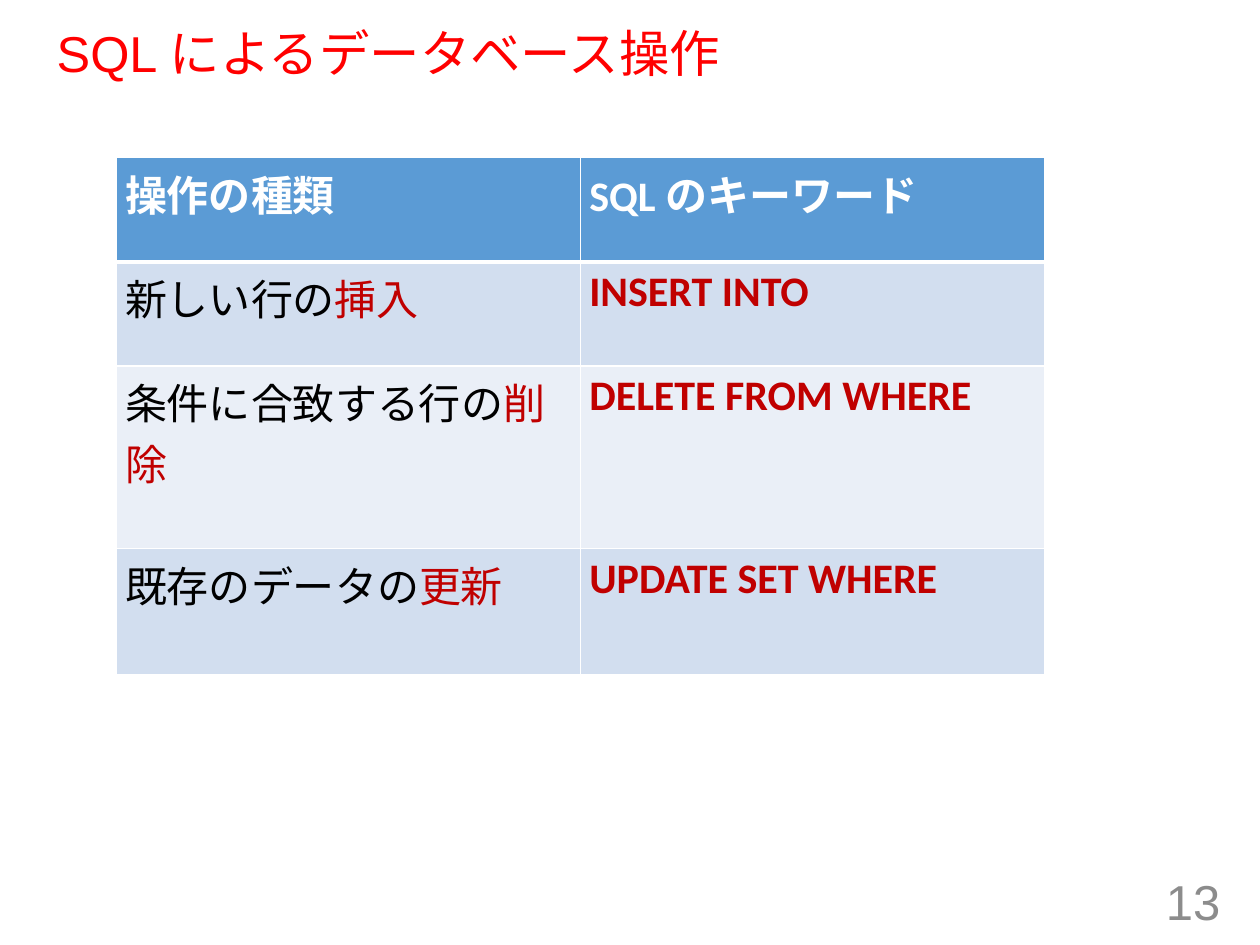
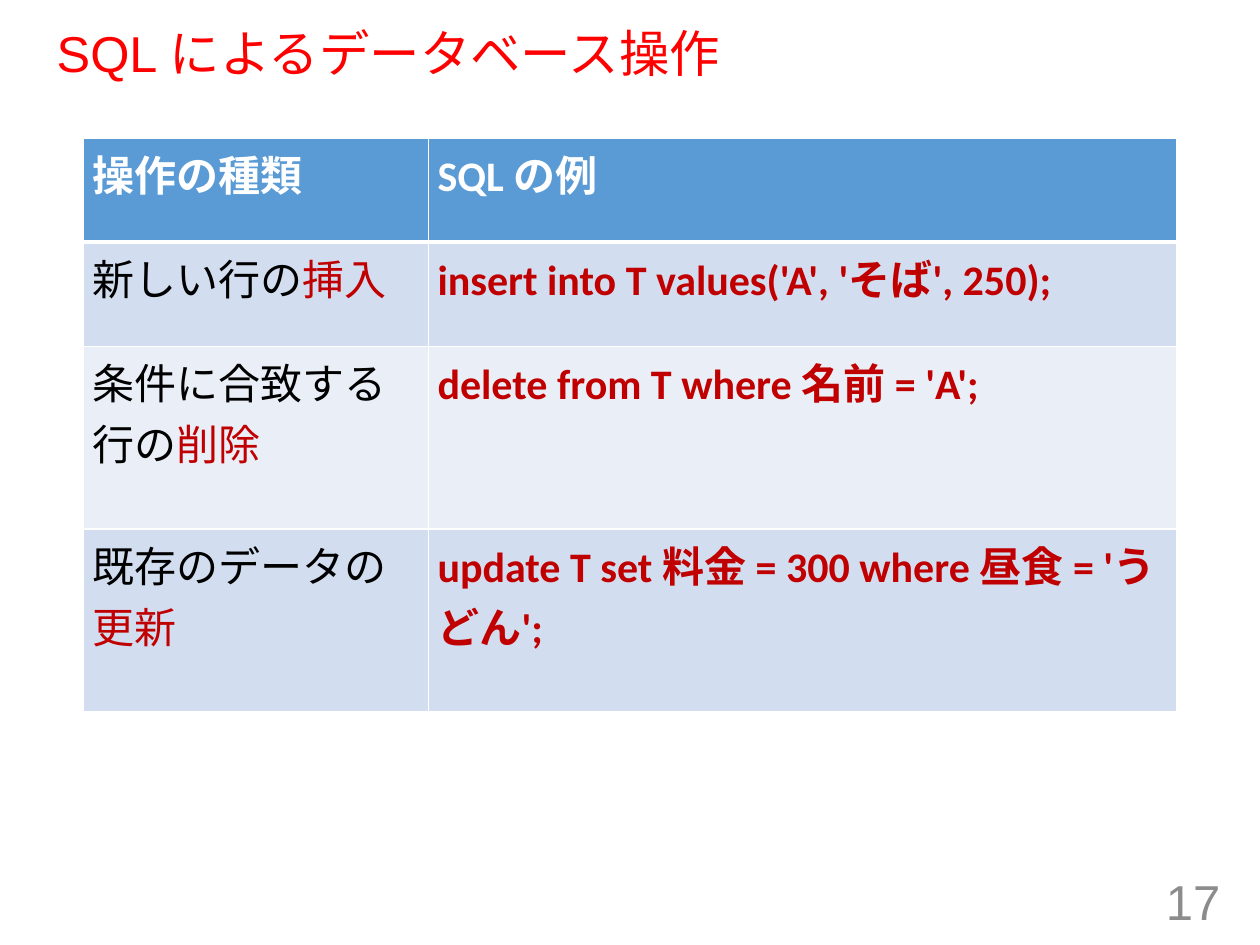
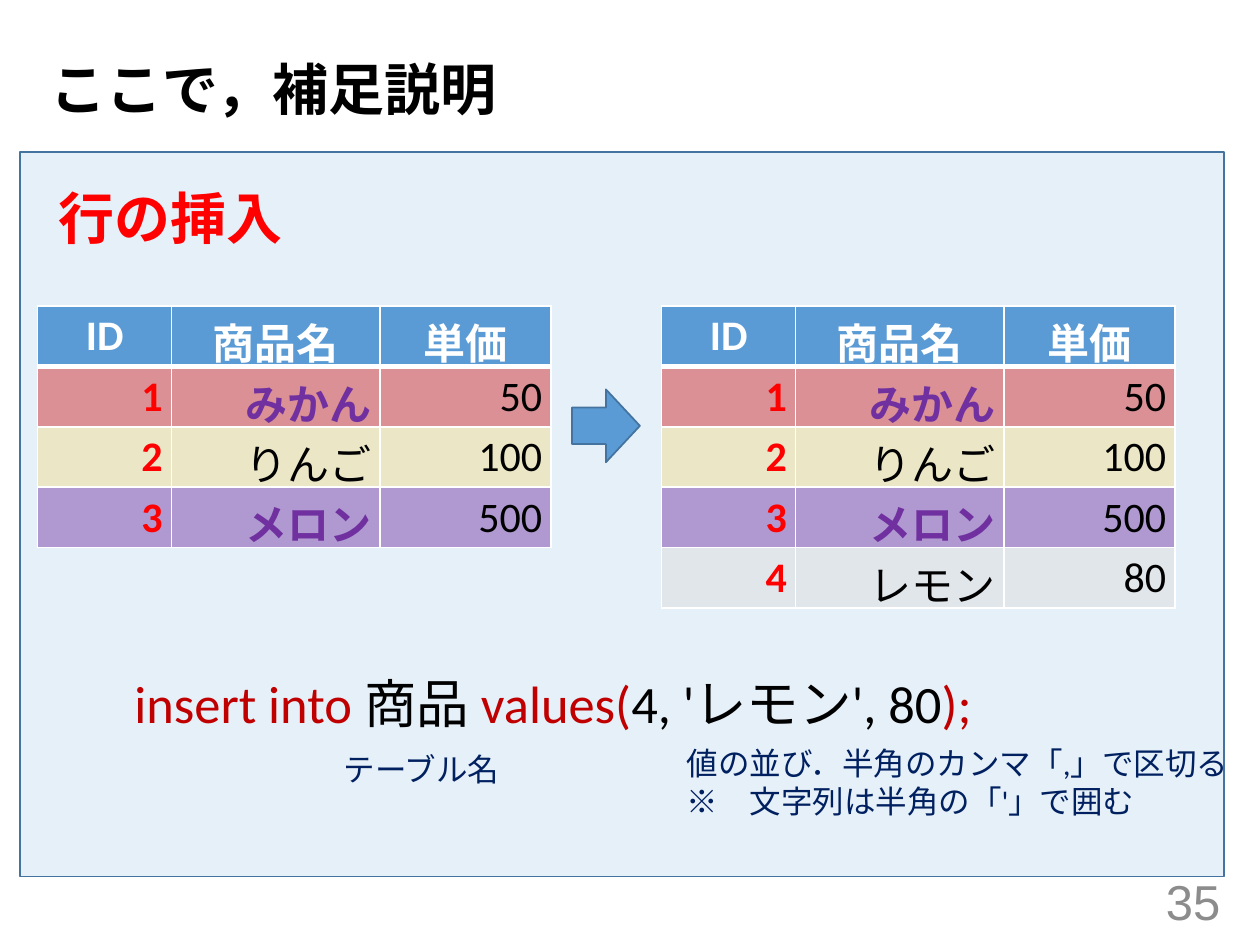
"""Build three slides on SQL row operations."""
from dataclasses import dataclass

from pptx import Presentation
from pptx import util as u
from pptx.dml.color import RGBColor
from pptx.enum import lang, shapes, text
from pptx.oxml import parse_xml
from pptx.oxml.ns import nsdecls, qn


@dataclass(frozen=True)
class Theme:
    """Colours, fonts and type sizes of the deck."""
    blue: str = "5B9BD5"
    edge: str = "43739E"
    bands: tuple = ("D2DEEF", "EAEFF7")
    white: str = "FFFFFF"
    black: str = "000000"
    red: str = "FF0000"
    dark: str = "C00000"
    navy: str = "002060"
    plum: str = "7030A0"
    gray: str = "8C8C8C"
    head: str = "Arial"
    body: str = "Calibri"
    alt: str = "Cabin"
    small: float = 18
    cell: float = 24
    page: float = 28
    title: float = 28.8
    code: float = 30
    big: float = 32


T = Theme()
LEFT, MID, RIGHT = text.PP_ALIGN.LEFT, text.PP_ALIGN.CENTER, text.PP_ALIGN.RIGHT


def cm(*vals):
    """Turn numbers into lengths."""
    return [u.Cm(v) for v in vals]


def style(run, size, color, font=T.body, bold=False):
    """Format one run."""
    run.font.size = u.Pt(size)
    run.font.name = font
    run.font.bold = bold
    run.font.color.rgb = RGBColor.from_string(color)
    run.font.language_id = lang.MSO_LANGUAGE_ID.JAPANESE


def write(frame, words, *look, align=LEFT):
    """Fill a frame with text in one look."""
    frame.text = words
    for par in frame.paragraphs:
        par.alignment = align
        for run in par.runs:
            style(run, *look)


def mix(par, parts):
    """Add runs, each given as its words and look."""
    for words, *look in parts:
        run = par.add_run()
        run.text = words
        style(run, *look)


def paint(item, node, color, alpha=100):
    """Fill an item, with opacity in percent."""
    item.fill.solid()
    item.fill.fore_color.rgb = RGBColor.from_string(color)
    if alpha < 100:
        tone = node.find(qn("a:solidFill"))[0]
        tone.append(parse_xml(f'<a:alpha {nsdecls("a")} val="{alpha * 1000}"/>'))


def shape(slide, kind, box, alpha=100):
    """Draw a blue outlined shape."""
    form = slide.shapes.add_shape(kind, *cm(*box))
    form.shadow.inherit = False
    paint(form, form._element.spPr, T.blue, alpha)
    form.line.color.rgb = RGBColor.from_string(T.edge)
    form.line.width = u.Pt(1)


def label(slide, box):
    """Add a wrapping text box and return its frame."""
    frame = slide.shapes.add_textbox(*cm(*box)).text_frame
    frame.word_wrap = True
    return frame


def start(deck, title, spot, page, *look):
    """Add a slide with its title and page number."""
    slide = deck.slides.add_slide(deck.slide_layouts[5])
    name = slide.shapes.title
    name.left, name.top, name.width, name.height = cm(*spot, 23.5, 1.3)
    frame = name.text_frame
    write(frame, title, *look)
    frame.auto_size = text.MSO_AUTO_SIZE.NONE
    frame.vertical_anchor = text.MSO_ANCHOR.MIDDLE
    frame.paragraphs[0].line_spacing = 0.9
    foot = label(slide, (19.13, 17.65, 5.72, 1.02))
    foot.vertical_anchor = text.MSO_ANCHOR.MIDDLE
    write(foot, str(page), T.page, T.gray, T.head, align=RIGHT)
    return slide


def border(cell, base):
    """Draw white cell borders, the bottom one in the given points."""
    props = cell._tc.get_or_add_tcPr()
    for side, wide in zip("LRTB", (1, 1, 1, base)):
        props.append(parse_xml(
            f'<a:ln{side} {nsdecls("a")} w="{u.Pt(wide)}"><a:solidFill>'
            f'<a:srgbClr val="{T.white}"/></a:solidFill></a:ln{side}>'))


def grid(slide, spot, cols, rows, heads, fills, align=LEFT):
    """Add a table with a header row and return it."""
    table = slide.shapes.add_table(
        len(rows), len(cols), *cm(*spot, sum(cols), sum(rows))).table
    for col, wide in zip(table.columns, cols):
        col.width = u.Cm(wide)
    for row, high, fill in zip(table.rows, rows, [(T.blue,), *fills]):
        row.height = u.Cm(high)
        for cell in row.cells:
            cell.margin_left = cell.margin_right = u.Cm(0.18)
            cell.margin_top = cell.margin_bottom = u.Cm(0.1)
            border(cell, 3 if fill[0] == T.blue else 1)
            paint(cell, cell._tc.tcPr, *fill)
    for cell, words in zip(table.rows[0].cells, heads):
        write(cell.text_frame, words, T.cell, T.white, T.body, True, align=align)
    return table


def verbs(deck, page, spot, cols, last, head, codes):
    """Build a slide that pairs operations with SQL."""
    slide = start(deck, "SQL によるデータベース操作", (0.89, 0.48), page,
                  T.title, T.red, T.head)
    fills = [(T.bands[i % 2],) for i in range(3)]
    table = grid(slide, spot, cols, (2.1, 2.1, 3.68, last),
                 ("操作の種類", head), fills)
    acts = (("新しい行の", "挿入"), ("条件に合致する行の", "削除"),
            ("既存のデータの", "更新"))
    for i, ((lead, act), code) in enumerate(zip(acts, codes), 1):
        mix(table.cell(i, 0).text_frame.paragraphs[0],
            [(lead, T.cell, T.black, T.alt), (act, T.cell, T.dark, T.alt)])
        write(table.cell(i, 1).text_frame, code, T.cell, T.dark, T.body, True)


GOODS = (
    ("みかん", 50, True, ("C80000", 40)),
    ("りんご", 100, False, ("FFC000", 20)),
    ("メロン", 500, True, (T.plum, 45)),
    ("レモン", 80, False, ("DBDBDB", 45)),
)


def stock(slide, spot, goods):
    """Add a table of goods and prices."""
    table = grid(slide, spot, (2.7, 4.2, 3.45), [1.2] * (len(goods) + 1),
                 ("ID", "商品名", "単価"), [g[3] for g in goods], MID)
    for i, (name, price, bold, _) in enumerate(goods, 1):
        looks = ((str(i), T.red, True),
                 (name, T.plum if bold else T.black, bold),
                 (str(price), T.black, False))
        for j, (words, color, heavy) in enumerate(looks):
            write(table.cell(i, j).text_frame, words, T.cell, color, T.body,
                  heavy, align=RIGHT)


def panel(slide, box):
    """Show how a row is inserted, inside a tinted box."""
    left, top = box[:2]

    def at(x, y, *size):
        return (round(left + x, 2), round(top + y, 2), *size)

    shape(slide, shapes.MSO_SHAPE.RECTANGLE, box, 15)
    stock(slide, at(0.35, 3.1), GOODS[:3])
    shape(slide, shapes.MSO_SHAPE.RIGHT_ARROW, at(11.12, 4.78, 1.37, 1.47))
    stock(slide, at(12.93, 3.1), GOODS)
    write(label(slide, at(6.27, 11.92, 3.8, 1.02)), "テーブル名", T.small, T.navy)
    write(label(slide, at(13.18, 11.81, 11.58, 1.8)),
          "値の並び．半角のカンマ「,」で区切る\n※　文字列は半角の「'」で囲む",
          T.small, T.navy)
    code = label(slide, at(2.05, 10.34, 17.55, 1.55))
    parts = (("insert into ", T.dark), ("商品 ", T.black), ("values(", T.dark),
             ("4, 'レモン', 80", T.black), (");", T.dark))
    mix(code.paragraphs[0], [(words, T.code, color) for words, color in parts])
    write(label(slide, at(0.53, 0.51, 5.08, 1.63)), "行の挿入",
          T.big, T.red, T.body, True)


def main():
    """Build and save the deck."""
    deck = Presentation()
    deck.slide_width, deck.slide_height = cm(25.4, 19.05)
    verbs(deck, 13, (2.34, 3.18), (9.36, 9.36), 2.54, "SQL のキーワード",
          ("INSERT INTO", "DELETE FROM WHERE", "UPDATE SET WHERE"))
    verbs(deck, 17, (1.68, 2.78), (6.96, 15.09), 3.68, "SQL の例",
          ("insert into T values('A', 'そば', 250);",
           "delete from T where 名前 = 'A';",
           "update T set 料金 = 300 where 昼食 = 'うどん';"))
    slide = start(deck, "ここで，補足説明", (0.76, 1.22), 35,
                  T.big, T.black, T.head, True)
    panel(slide, (0.41, 3.07, 24.26, 14.6))
    deck.save("out.pptx")


if __name__ == "__main__":
    main()
